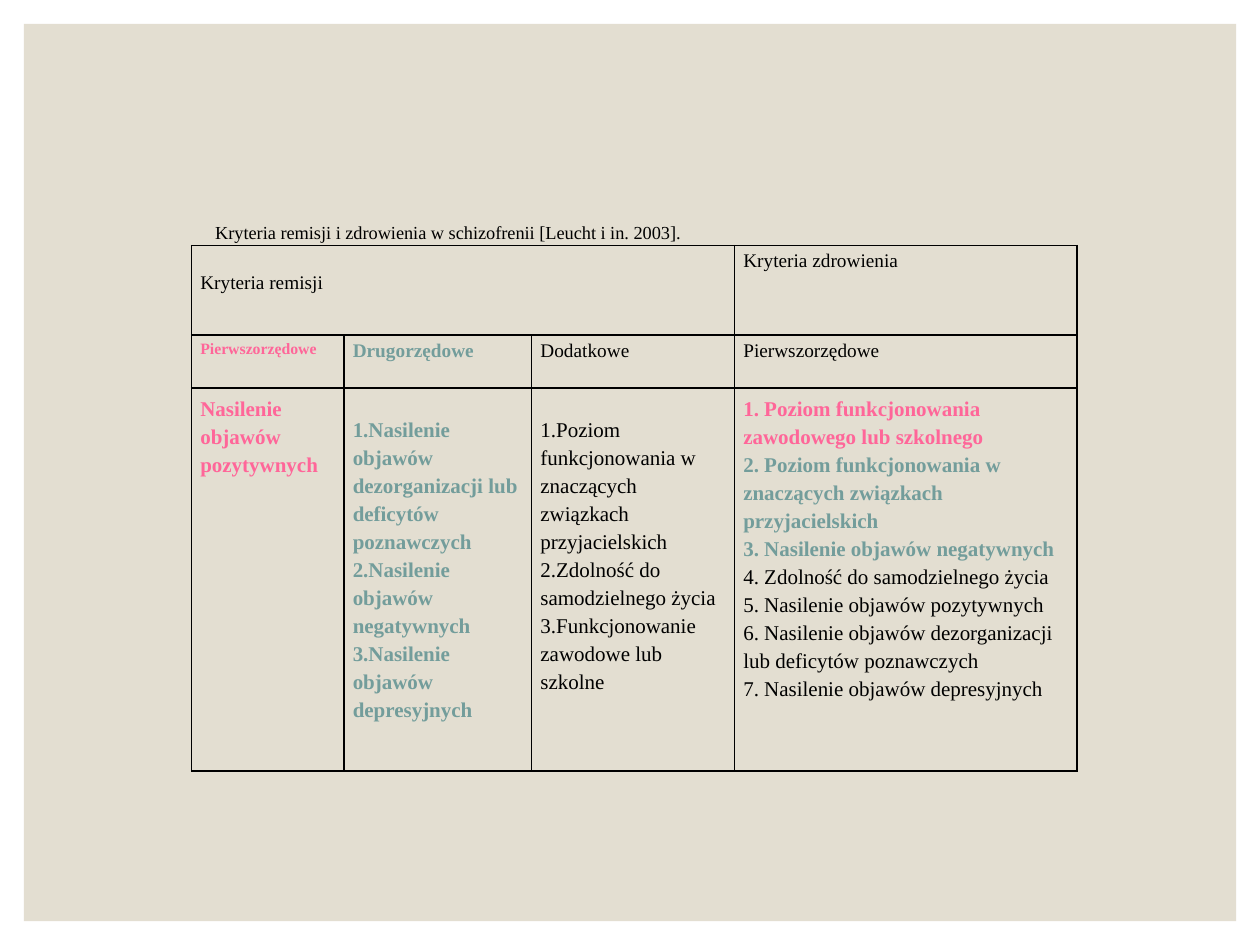
from pptx import Presentation, util as u
from pptx.dml.color import RGBColor
from pptx.enum import shapes, text
from pptx.oxml import parse_xml
from pptx.oxml.ns import nsdecls

THEME = {
    "font": "Times New Roman", "panel": "E3DED1", "ink": "000000",
    "pink": "FF6699", "teal": "739D9B",
    "caption": 10.5, "small": 9, "head": 11, "body": 12,
}


def write(frame, lines, size, spacing=None, number=False):
    """Fill a text frame with (wording, colour name) lines; coloured ones are bold."""
    for i, (words, hue) in enumerate(lines):
        para = frame.paragraphs[0] if i == 0 else frame.add_paragraph()
        para.line_spacing = spacing
        run = para.add_run()
        run.text = words
        form = {"name": THEME["font"], "size": u.Pt(THEME[size]), "bold": hue != "ink"}
        for key, val in form.items():
            setattr(run.font, key, val)
        run.font.color.rgb = RGBColor.from_string(THEME[hue])
        if number:
            props = para._p.get_or_add_pPr()
            props.set("marL", "0")
            props.set("indent", "0")
            props.append(parse_xml(
                f'<a:buAutoNum {nsdecls("a")} type="arabicPeriod"/>'))


def border(cell):
    """Draw a 1 pt line on all four sides of a cell."""
    props = cell._tc.get_or_add_tcPr()
    for i, side in enumerate(("lnL", "lnR", "lnT", "lnB")):
        props.insert(i, parse_xml(
            f'<a:{side} {nsdecls("a")} w="{u.Pt(1)}"><a:solidFill>'
            f'<a:srgbClr val="{THEME["ink"]}"/></a:solidFill></a:{side}>'))


deck = Presentation()
deck.slide_width, deck.slide_height = u.Inches(10), u.Inches(7.5)
slide = deck.slides.add_slide(deck.slide_layouts[6])

panel = slide.shapes.add_shape(
    shapes.MSO_SHAPE.RECTANGLE, *map(u.Inches, (0.19, 0.19, 9.62, 7.12)))
panel.shadow.inherit = False
panel.fill.solid()
panel.fill.fore_color.rgb = RGBColor.from_string(THEME["panel"])
panel.line.fill.background()

label = slide.shapes.add_textbox(*map(u.Inches, (1.61, 1.7, 3.95, 0.28))).text_frame
label.word_wrap = False
label.vertical_anchor = text.MSO_ANCHOR.MIDDLE
write(label, [("Kryteria remisji i zdrowienia w schizofrenii [Leucht i in. 2003].", "ink")],
      "caption")

# Table
cols = [1.21, 1.49, 1.61, 2.72]
rows = [0.71, 0.42, 3.04]
table = slide.shapes.add_table(
    len(rows), len(cols),
    *map(u.Inches, (1.52, 1.95, sum(cols), sum(rows)))).table
table.first_row = table.horz_banding = False
for col, wide in zip(table.columns, cols):
    col.width = u.Inches(wide)
for row, high in zip(table.rows, rows):
    row.height = u.Inches(high)

pad = {"margin_left": 0.07, "margin_right": 0.07, "margin_top": 0.04, "margin_bottom": 0.04}
for cell in table.iter_cells():
    cell.fill.background()
    border(cell)
    for key, val in pad.items():
        setattr(cell, key, u.Inches(val))
table.cell(0, 0).merge(table.cell(0, 2))

heads = [
    (0, 0, "Kryteria remisji", "ink", "head"),
    (0, 3, "Kryteria zdrowienia", "ink", "head"),
    (1, 0, "Pierwszorzędowe", "pink", "small"),
    (1, 1, "Drugorzędowe", "teal", "head"),
    (1, 2, "Dodatkowe", "ink", "head"),
    (1, 3, "Pierwszorzędowe", "ink", "head"),
]
for r, c, words, hue, size in heads:
    write(table.cell(r, c).text_frame, [(words, hue)], size)

lists = [
    [("Nasilenie objawów pozytywnych", "pink")],
    [("Nasilenie objawów dezorganizacji lub deficytów poznawczych", "teal"),
     ("Nasilenie objawów negatywnych", "teal"),
     ("Nasilenie objawów depresyjnych", "teal")],
    [("Poziom funkcjonowania w znaczących związkach przyjacielskich", "ink"),
     ("Zdolność do samodzielnego życia", "ink"),
     ("Funkcjonowanie zawodowe lub szkolne", "ink")],
    [("1. Poziom funkcjonowania zawodowego lub szkolnego", "pink"),
     ("2. Poziom funkcjonowania w znaczących związkach przyjacielskich", "teal"),
     ("3. Nasilenie objawów negatywnych", "teal"),
     ("4. Zdolność do samodzielnego życia", "ink"),
     ("5. Nasilenie objawów pozytywnych", "ink"),
     ("6. Nasilenie objawów dezorganizacji lub deficytów poznawczych", "ink"),
     ("7. Nasilenie objawów depresyjnych", "ink")],
]
for c, lines in enumerate(lists):
    write(table.cell(2, c).text_frame, lines, "body", 1.2, number=c in (1, 2))

# These cells start one line lower
for r, c in ((0, 0), (2, 1), (2, 2)):
    table.cell(r, c).margin_top = u.Inches(0.21)

deck.save("out.pptx")
